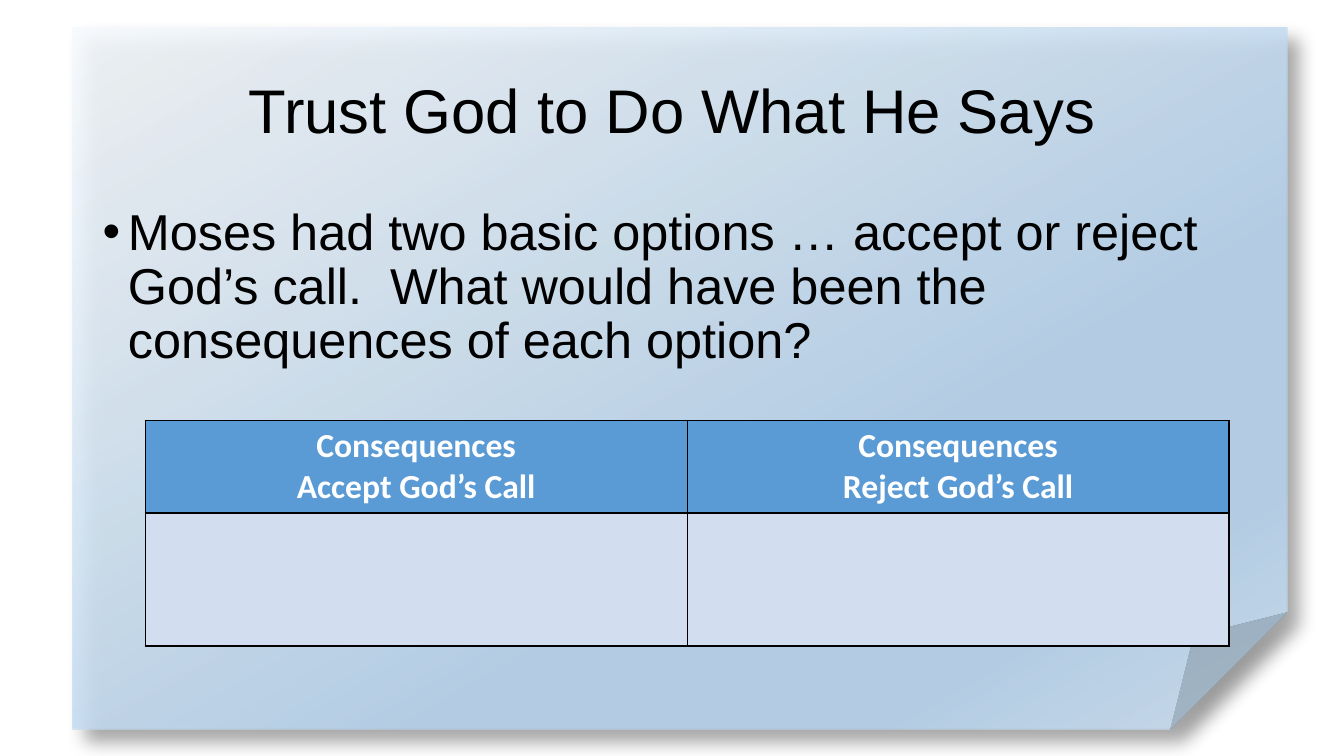
"""Build the slide about the two options Moses had."""
from lxml.etree import SubElement
from pptx import Presentation
from pptx.dml.color import RGBColor
from pptx.enum.shapes import MSO_SHAPE
from pptx.enum.text import MSO_ANCHOR, PP_ALIGN
from pptx.oxml import parse_xml
from pptx.oxml.ns import qn
from pptx.util import Inches, Pt

TITLE = "Trust God to Do What He Says"
QUESTION = ("Moses had two basic options … accept or reject God’s call.  "
            "What would have been the consequences of each option?")
TABLE_ROWS = [
    ["Consequences\nAccept God’s Call", "Consequences\nReject God’s Call"],
    ["", ""],
]
COLORS = {"text": "000000", "header_text": "FFFFFF", "header": "5B9BD5",
          "body": "D2DEEF", "border": "000000", "shadow": "000000"}
PAPER_STOPS = [(0, "F7FAFD"), (64, "B5D2EC"), (83, "B5D2EC"), (100, "CEE1F2")]
PAPER_OPACITY = 87
PAPER_ANGLE = 60
SHADOW = {"opacity": 40, "blur": 13, "distance": 13, "angle": 45}

PAPER_BOX = (0.72, 0.27, 12.05, 6.97)
TITLE_BOX = (0.92, 0.4, 11.5, 1.45)
QUESTION_BOX = (0.92, 2, 11.5, 4.76)
TABLE_BOX = (1.44, 4.17, 10.75, 2.24)
ROW_HEIGHTS = [0.92, 1.32]
FORMATS = {
    "title": {"name": "Arial", "size": Pt(44), "bold": False},
    "question": {"name": "Arial", "size": Pt(36), "bold": False},
    "header": {"name": "Calibri", "size": Pt(24), "bold": True},
}
NAMESPACE = 'xmlns:a="http://schemas.openxmlformats.org/drawingml/2006/main"'


def write_text(paragraph, text, style, color):
    paragraph.text = text
    for run in paragraph.runs:
        for name, value in FORMATS[style].items():
            setattr(run.font, name, value)
        run.font.color.rgb = RGBColor.from_string(COLORS[color])


def place(shape, box):
    for name, value in zip(("left", "top", "width", "height"), box):
        setattr(shape, name, Inches(value))


def add_paper(slide):
    paper = slide.shapes.add_shape(MSO_SHAPE.FOLDED_CORNER, *map(Inches, PAPER_BOX))
    slide.shapes.title.element.addprevious(paper.element)
    paper.line.fill.background()
    stops = "".join(
        f'<a:gs pos="{position * 1000}"><a:srgbClr val="{color}">'
        f'<a:alpha val="{PAPER_OPACITY * 1000}"/></a:srgbClr></a:gs>'
        for position, color in PAPER_STOPS)
    gradient = parse_xml(
        f'<a:gradFill {NAMESPACE} rotWithShape="1"><a:gsLst>{stops}</a:gsLst>'
        f'<a:lin ang="{PAPER_ANGLE * 60000}" scaled="0"/></a:gradFill>')
    effects = parse_xml(
        f'<a:effectLst {NAMESPACE}><a:outerShdw blurRad="{Pt(SHADOW["blur"])}" '
        f'dist="{Pt(SHADOW["distance"])}" dir="{SHADOW["angle"] * 60000}" '
        f'algn="tl" rotWithShape="0"><a:srgbClr val="{COLORS["shadow"]}">'
        f'<a:alpha val="{SHADOW["opacity"] * 1000}"/></a:srgbClr>'
        '</a:outerShdw></a:effectLst>')
    outline = paper.element.spPr.find(qn("a:ln"))
    outline.addprevious(gradient)
    outline.addnext(effects)


def add_title(slide):
    title = slide.shapes.title
    place(title, TITLE_BOX)
    title.text_frame.vertical_anchor = MSO_ANCHOR.MIDDLE
    paragraph = title.text_frame.paragraphs[0]
    paragraph.alignment = PP_ALIGN.CENTER
    paragraph.line_spacing = 0.9
    write_text(paragraph, TITLE, "title", "text")


def add_question(slide):
    frame = slide.shapes.add_textbox(*map(Inches, QUESTION_BOX)).text_frame
    frame.word_wrap = True
    paragraph = frame.paragraphs[0]
    paragraph.line_spacing = 0.9
    properties = paragraph._p.get_or_add_pPr()
    properties.set("marL", str(Inches(0.25)))
    properties.set("indent", str(-Inches(0.25)))
    SubElement(properties, qn("a:buFont"), typeface="Arial")
    SubElement(properties, qn("a:buChar"), char="•")
    write_text(paragraph, QUESTION, "question", "text")


def add_borders(cell):
    properties = cell._tc.get_or_add_tcPr()
    for index, side in enumerate(("lnL", "lnR", "lnT", "lnB")):
        properties.insert(index, parse_xml(
            f'<a:{side} {NAMESPACE} w="{Pt(1)}"><a:solidFill>'
            f'<a:srgbClr val="{COLORS["border"]}"/></a:solidFill></a:{side}>'))


def add_consequences(slide):
    table = slide.shapes.add_table(
        len(TABLE_ROWS), len(TABLE_ROWS[0]), *map(Inches, TABLE_BOX)).table
    for row_index, texts in enumerate(TABLE_ROWS):
        table.rows[row_index].height = Inches(ROW_HEIGHTS[row_index])
        for column_index, text in enumerate(texts):
            cell = table.cell(row_index, column_index)
            cell.fill.solid()
            fill = "body" if row_index else "header"
            cell.fill.fore_color.rgb = RGBColor.from_string(COLORS[fill])
            add_borders(cell)
            if text:
                paragraph = cell.text_frame.paragraphs[0]
                paragraph.alignment = PP_ALIGN.CENTER
                write_text(paragraph, text, "header", "header_text")


def main():
    presentation = Presentation()
    presentation.slide_width = Inches(13.33)
    presentation.slide_height = Inches(7.5)
    slide = presentation.slides.add_slide(presentation.slide_layouts[5])
    add_paper(slide)
    add_title(slide)
    add_question(slide)
    add_consequences(slide)
    presentation.save("out.pptx")


if __name__ == "__main__":
    main()
